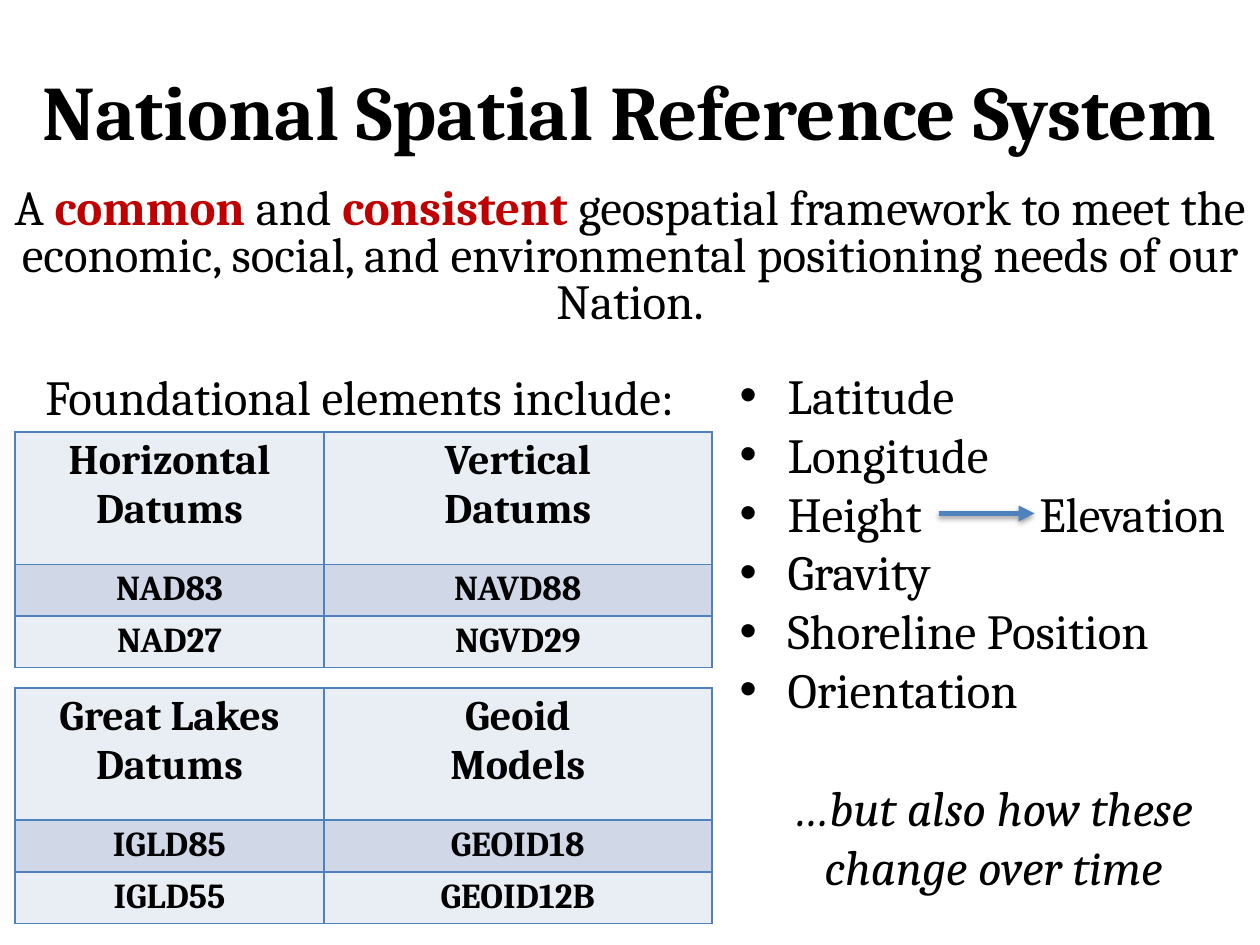
from dataclasses import dataclass

from lxml import etree
from pptx import Presentation
from pptx.dml.color import RGBColor
from pptx.enum.shapes import MSO_CONNECTOR
from pptx.enum.text import MSO_ANCHOR, MSO_AUTO_SIZE, PP_ALIGN
from pptx.oxml.ns import qn
from pptx.util import Inches, Pt

CENTER, LEFT = PP_ALIGN.CENTER, PP_ALIGN.LEFT
TOP, MIDDLE = MSO_ANCHOR.TOP, MSO_ANCHOR.MIDDLE
NO_FIT = MSO_AUTO_SIZE.NONE
STRAIGHT = MSO_CONNECTOR.STRAIGHT
TWO_CONTENT = 3


@dataclass(frozen=True)
class Theme:
    font: str = "Cambria"
    text: str = "000000"
    accent: str = "C00000"
    line: str = "4F81BD"
    light: str = "E9EDF4"
    band: str = "D0D8E8"
    title: int = 44
    body: int = 28
    head: int = 24
    cell: int = 20


T = Theme()


def add_run(p, text, size, color=T.text, bold=False, italic=False):
    r = p.add_run()
    r.text = text
    f = r.font
    f.name, f.size, f.bold, f.italic = T.font, Pt(size), bold, italic
    f.color.rgb = RGBColor.from_string(color)


def set_box(sp, box, anchor=TOP):
    """Places a text shape and returns its text frame."""
    sp.left, sp.top, sp.width, sp.height = (Inches(v) for v in box)
    tf = sp.text_frame
    tf.word_wrap = True
    tf.auto_size = NO_FIT
    tf.vertical_anchor = anchor
    return tf


def format_paragraph(p, align=LEFT, spacing=1.0, before=0, bullet=None, margin=0, indent=0):
    pPr = p._p.get_or_add_pPr()
    pPr.set("marL", str(Inches(margin)))
    pPr.set("indent", str(Inches(indent)))
    if bullet:
        etree.SubElement(pPr, qn("a:buFont")).set("typeface", "Arial")
        etree.SubElement(pPr, qn("a:buChar")).set("char", bullet)
    else:
        etree.SubElement(pPr, qn("a:buNone"))
    p.alignment = align
    p.line_spacing = spacing
    p.space_before = Pt(before)


def add_title(sp, box):
    p = set_box(sp, box, MIDDLE).paragraphs[0]
    format_paragraph(p, CENTER, 0.9)
    add_run(p, "National Spatial Reference System", T.title, bold=True)


def add_intro(sp, box):
    tf = set_box(sp, box)
    p = tf.paragraphs[0]
    format_paragraph(p, CENTER, 0.8)
    for text, strong in (
        ("A ", False),
        ("common", True),
        (" and ", False),
        ("consistent ", True),
        ("geospatial framework to meet the economic, social, and environmental "
         "positioning needs of our Nation.", False),
    ):
        add_run(p, text, T.body, T.accent if strong else T.text, bold=strong)
    p = tf.add_paragraph()
    format_paragraph(p, spacing=0.8, before=28, margin=0.26)
    add_run(p, "Foundational elements include:", T.body)


def add_element_list(sp, box, items, closing):
    tf = set_box(sp, box)
    for i, item in enumerate(items):
        p = tf.add_paragraph() if i else tf.paragraphs[0]
        format_paragraph(p, bullet="•", margin=0.38, indent=-0.38)
        add_run(p, item, T.body)
    p = tf.add_paragraph()
    format_paragraph(p, CENTER, before=34)
    add_run(p, closing, T.body, italic=True)


def set_borders(cell):
    tcPr = cell._tc.get_or_add_tcPr()
    for side in ("a:lnL", "a:lnR", "a:lnT", "a:lnB"):
        ln = etree.SubElement(tcPr, qn(side), w=str(Pt(1)))
        fill = etree.SubElement(ln, qn("a:solidFill"))
        etree.SubElement(fill, qn("a:srgbClr"), val=T.line)


def add_datum_table(s, box, rows):
    """Each cell is a list of lines; the first row holds the headings."""
    left, top, width, height = (Inches(v) for v in box)
    table = s.shapes.add_table(len(rows), 2, left, top, width, height).table
    table.first_row = table.horz_banding = False
    for col, w in zip(table.columns, (2.45, 3.08)):
        col.width = Inches(w)
    for i, row in enumerate(rows):
        table.rows[i].height = Inches(0.41 if i else 1.05)
        for j, lines in enumerate(row):
            cell = table.cell(i, j)
            set_borders(cell)
            cell.fill.solid()
            cell.fill.fore_color.rgb = RGBColor.from_string(T.band if i == 1 else T.light)
            cell.margin_left = cell.margin_right = Inches(0.08)
            cell.margin_top = cell.margin_bottom = Inches(0.04)
            tf = cell.text_frame
            for k, text in enumerate(lines):
                p = tf.add_paragraph() if k else tf.paragraphs[0]
                p.alignment = CENTER
                add_run(p, text, T.cell if i else T.head, bold=True)


def add_elevation_note(s, box):
    """Arrow at the left of the box, with its label filling the rest."""
    left, top, width, height = box
    y = Inches(top + height / 2)
    arrow = s.shapes.add_connector(STRAIGHT, Inches(left), y, Inches(left + 0.76), y)
    arrow.line.color.rgb = RGBColor.from_string(T.line)
    arrow.line.width = Pt(3)
    etree.SubElement(arrow.line._get_or_add_ln(), qn("a:tailEnd"), type="triangle")
    effects = etree.SubElement(arrow._element.spPr, qn("a:effectLst"))
    shadow = etree.SubElement(effects, qn("a:outerShdw"), blurRad=str(Pt(3.1)),
                              dist=str(Pt(1.6)), dir="5400000", rotWithShape="0")
    color = etree.SubElement(shadow, qn("a:srgbClr"), val="000000")
    etree.SubElement(color, qn("a:alpha"), val="38000")

    sp = s.shapes.add_textbox(0, 0, 0, 0)
    p = set_box(sp, (left + 0.7, top, width - 0.7, height)).paragraphs[0]
    add_run(p, "Elevation", T.body)


def main():
    prs = Presentation()
    prs.slide_width, prs.slide_height = Inches(10), Inches(7.5)
    s = prs.slides.add_slide(prs.slide_layouts[TWO_CONTENT - 0])
    title, intro, elements = list(s.placeholders)[:3]
    add_title(title, (0, 0.19, 10, 1.45))
    add_intro(intro, (0, 1.44, 10, 2.14))
    add_element_list(
        elements, (5.77, 2.85, 4.23, 4.34),
        ("Latitude", "Longitude", "Height", "Gravity", "Shoreline Position", "Orientation"),
        "…but also how these change over time",
    )
    tables = (
        ((["Horizontal", "Datums"], ["Vertical", "Datums"]),
         (["NAD83"], ["NAVD88"]),
         (["NAD27"], ["NGVD29"])),
        ((["Great Lakes", "Datums"], ["Geoid", "Models"]),
         (["IGLD85"], ["GEOID18"]),
         (["IGLD55"], ["GEOID12B"])),
    )
    for i, rows in enumerate(tables):
        add_datum_table(s, (0.12, 3.43 + i * 2.03, 5.53, 1.87), rows)
    add_elevation_note(s, (7.45, 3.79, 2.55, 0.57))
    prs.save("out.pptx")


if __name__ == "__main__":
    main()
